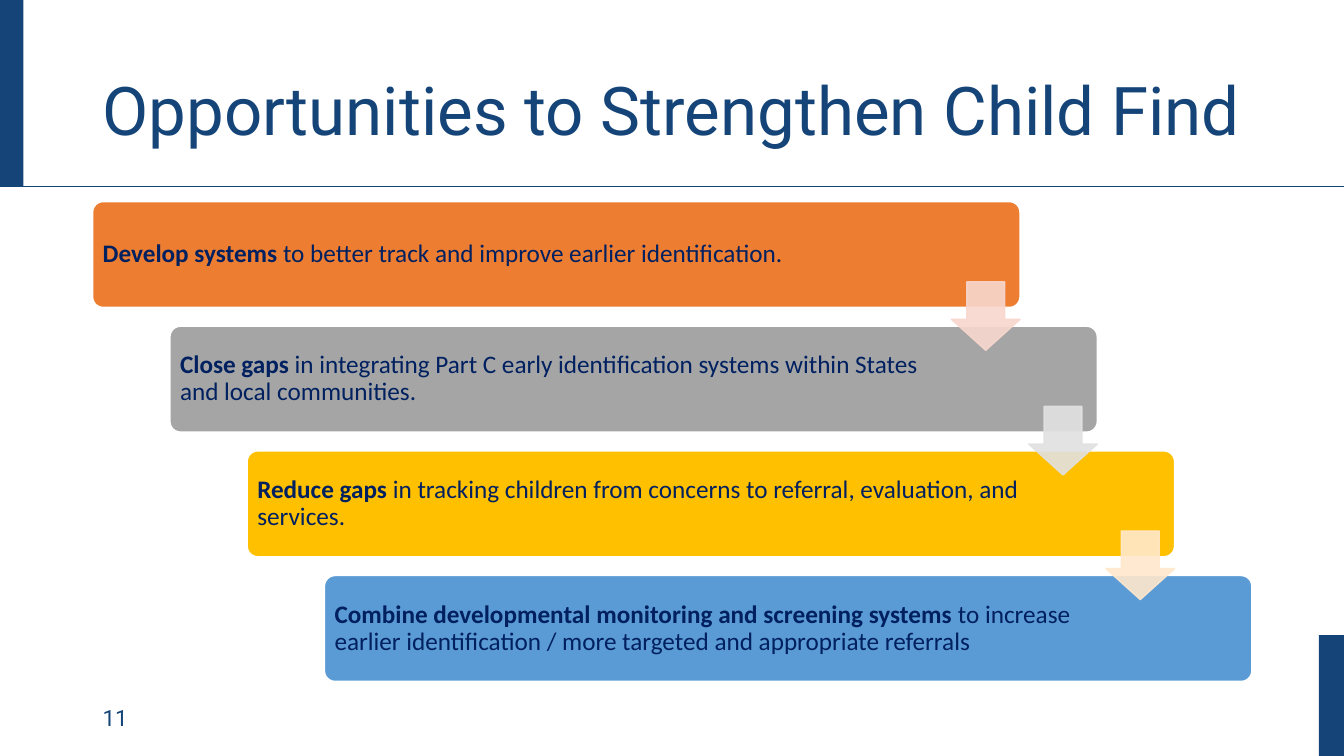
from dataclasses import dataclass

from lxml import etree
from pptx import Presentation
from pptx.dml.color import RGBColor
from pptx.enum.shapes import MSO_CONNECTOR, MSO_SHAPE
from pptx.enum.text import MSO_ANCHOR, MSO_AUTO_SIZE, PP_ALIGN
from pptx.oxml.ns import qn
from pptx.util import Pt

RECTANGLE = MSO_SHAPE.RECTANGLE
ROUNDED = MSO_SHAPE.ROUNDED_RECTANGLE
DOWN_ARROW = MSO_SHAPE.DOWN_ARROW
STRAIGHT = MSO_CONNECTOR.STRAIGHT
MIDDLE = MSO_ANCHOR.MIDDLE
LEFT = PP_ALIGN.LEFT
NO_AUTOFIT = MSO_AUTO_SIZE.NONE


@dataclass(frozen=True)
class Theme:
    navy: str = "154578"
    step_text: str = "002060"
    white: str = "FFFFFF"
    heading_font: str = "Roboto"
    step_font: str = "Calibri"
    title_size: int = 48
    step_size: int = 18
    number_size: int = 16
    line_spacing: float = 0.9


THEME = Theme()
SLIDE_WIDTH, SLIDE_HEIGHT = 960, 540
HEADER_HEIGHT = 133.2

STEPS = [
    ("Develop systems", " to better track and improve earlier identification.",
     "ED7D31", "F8D7CE"),
    ("Close gaps", " in integrating Part C early identification systems within "
     "States and local communities.", "A5A5A5", "E1E1E1"),
    ("Reduce gaps", " in tracking children from concerns to referral, "
     "evaluation, and services.", "FFC000", "FFE8CC"),
    ("Combine developmental monitoring and screening systems",
     " to increase earlier identification / more targeted and appropriate "
     "referrals", "5B9BD5", None),
]


def rgb(color):
    return RGBColor.from_string(color)


def style_font(font, name, size, color, bold=False):
    font.name = name
    font.size = Pt(size)
    font.color.rgb = rgb(color)
    font.bold = bold


def add_filled(slide, preset, box, fill, outline=None):
    shape = slide.shapes.add_shape(preset, *map(Pt, box))
    shape.shadow.inherit = False
    shape.fill.solid()
    shape.fill.fore_color.rgb = rgb(fill)
    if outline:
        shape.line.color.rgb = rgb(outline)
        shape.line.width = Pt(1)
    else:
        shape.line.fill.background()
    return shape


def add_frame(slide, box):
    left, top, width, height = box
    add_filled(slide, RECTANGLE, (left, top, 16.8, HEADER_HEIGHT), THEME.navy)
    add_filled(slide, RECTANGLE,
               (left + width - 18, top + height - 86.4, 18, 86.4), THEME.navy)
    rule_y = Pt(top + HEADER_HEIGHT)
    rule = slide.shapes.add_connector(
        STRAIGHT, Pt(left), rule_y, Pt(left + width), rule_y)
    rule.line.color.rgb = rgb(THEME.navy)
    rule.line.width = Pt(0.5)
    etree.SubElement(rule._element.spPr, qn("a:effectLst"))


def add_title(slide, box, wording):
    title = slide.shapes.title
    title.left, title.top, title.width, title.height = map(Pt, box)
    frame = title.text_frame
    frame.text = wording
    frame.word_wrap = True
    frame.auto_size = NO_AUTOFIT
    frame.vertical_anchor = MIDDLE
    heading = frame.paragraphs[0]
    heading.alignment = LEFT
    heading.line_spacing = THEME.line_spacing
    style_font(heading.runs[0].font, THEME.heading_font, THEME.title_size,
               THEME.navy)


def add_page_number(slide, box, number):
    frame = slide.shapes.add_textbox(*map(Pt, box)).text_frame
    frame.text = number
    frame.word_wrap = True
    frame.vertical_anchor = MIDDLE
    style_font(frame.paragraphs[0].runs[0].font, THEME.heading_font,
               THEME.number_size, THEME.navy)


def add_step(slide, box, lead, detail, fill):
    step = add_filled(slide, ROUNDED, box, fill, THEME.white)
    step.adjustments[0] = 0.1
    frame = step.text_frame
    frame.word_wrap = True
    frame.vertical_anchor = MIDDLE
    frame.margin_left = frame.margin_top = frame.margin_bottom = Pt(5)
    frame.margin_right = Pt(108)
    sentence = frame.paragraphs[0]
    sentence.alignment = LEFT
    sentence.line_spacing = THEME.line_spacing
    for wording, bold in ((lead, True), (detail, False)):
        run = sentence.add_run()
        run.text = wording
        style_font(run.font, THEME.step_font, THEME.step_size,
                   THEME.step_text, bold)


def add_step_arrow(slide, box, color):
    arrow = add_filled(slide, DOWN_ARROW, box, color, color)
    arrow.adjustments[0] = 0.45
    arrow.adjustments[1] = 0.55
    arrow.adjustments[0], arrow.adjustments[1] = 0.55, 0.45
    for tint in arrow._element.spPr.iter(qn("a:srgbClr")):
        etree.SubElement(tint, qn("a:alpha"), val="90000")


def add_staircase(slide, box):
    left, top, width, height = box
    step_width, step_height, arrow_size = 662.4, 75.6, 49
    shift_x = (width - step_width) / (len(STEPS) - 1)
    shift_y = (height - step_height) / (len(STEPS) - 1)
    corners = [(left + i * shift_x, top + i * shift_y)
               for i in range(len(STEPS))]
    for (x, y), (lead, detail, fill, _) in zip(corners, STEPS):
        add_step(slide, (x, y, step_width, step_height), lead, detail, fill)
    for (x, y), (*_, arrow_color) in zip(corners[:-1], STEPS):
        add_step_arrow(slide, (x + step_width - arrow_size, y + 57.2,
                               arrow_size, arrow_size), arrow_color)


def main():
    deck = Presentation()
    deck.slide_width, deck.slide_height = Pt(SLIDE_WIDTH), Pt(SLIDE_HEIGHT)
    slide = deck.slides.add_slide(deck.slide_layouts[5])
    add_frame(slide, (0, 0, SLIDE_WIDTH, SLIDE_HEIGHT))
    add_page_number(slide, (66.2, 498.2, 216, 28.8), "11")
    add_title(slide, (66.2, 28.8, 828, 104.4),
              "Opportunities to Strengthen Child Find")
    add_staircase(slide, (66.2, 144, 828, 342.7))
    deck.save("out.pptx")


if __name__ == "__main__":
    main()
